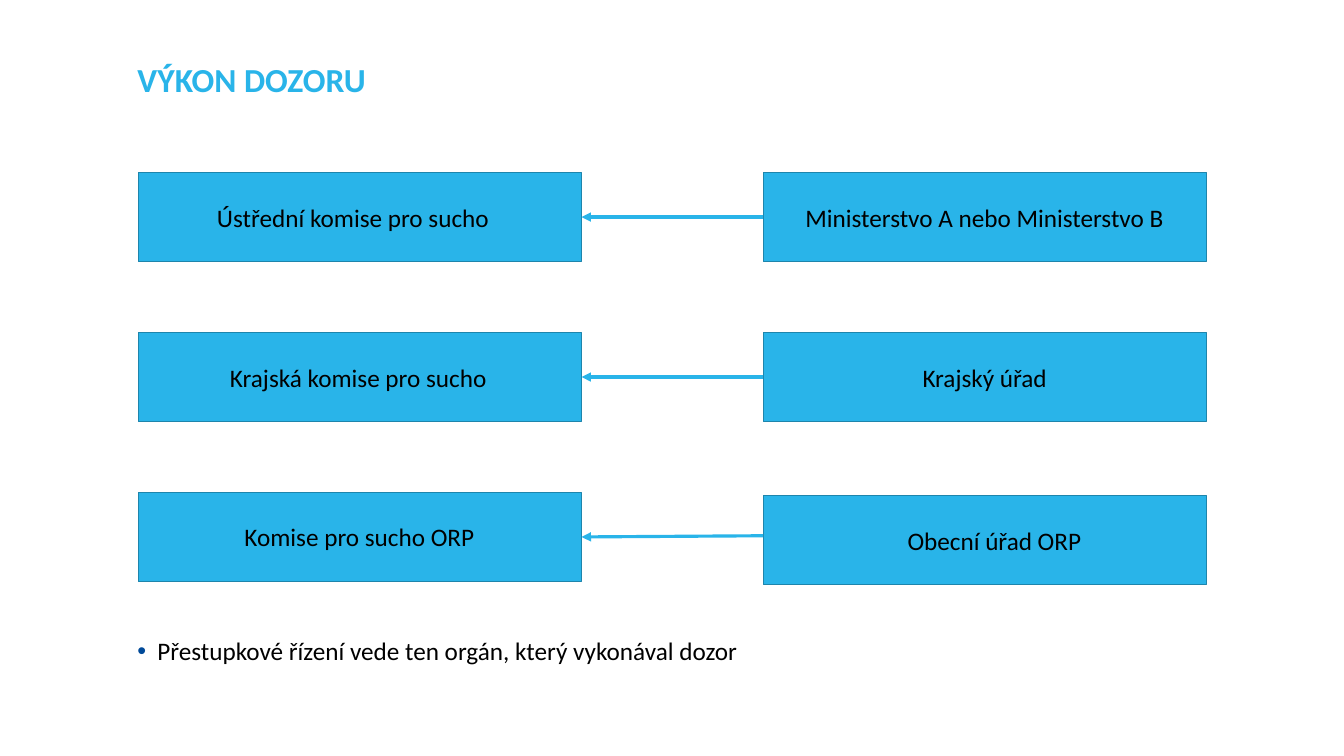
from dataclasses import dataclass

from lxml.etree import SubElement
from pptx import Presentation
from pptx.dml.color import RGBColor
from pptx.enum.shapes import MSO_CONNECTOR as Connector, MSO_SHAPE as Shape
from pptx.enum.text import MSO_ANCHOR as Anchor, MSO_AUTO_SIZE as AutoSize, PP_ALIGN as Align
from pptx.oxml.ns import qn
from pptx.util import Cm, Pt

BLUE, EDGE, BLACK, BULLET = "29B4E9", "1E85AC", "000000", "004A99"
FONT = "Calibri"

# Grid, in centimetres
MARGIN = 6.93
LEFT_X, RIGHT_X = 6.96, 38.46
BOX_WIDTH, BOX_HEIGHT = 22.35, 4.5
FIRST_TOP, ROW_STEP = 8.69, 8.06
LABEL_HEIGHT = 1.8


@dataclass
class Authority:
    name: str
    label_left: float
    label_width: float
    drop: float = 0  # offset below the row's top


@dataclass
class Row:
    commission: Authority
    supervisor: Authority
    arrow_start: float | None = None  # height of a start away from the side's middle


ROWS = [
    Row(Authority("Ústřední komise pro sucho", 8.61, 18.36),
        Authority("Ministerstvo A nebo Ministerstvo B", 39.7, 19.84)),
    Row(Authority("Krajská komise pro sucho", 9.8, 16.51),
        Authority("Krajský úřad", 40.36, 18.54)),
    Row(Authority("Komise pro sucho ORP", 9.25, 17.73),
        Authority("Obecní úřad ORP", 41.33, 17.58, drop=0.16), arrow_start=27),
]


def color(value: str) -> RGBColor:
    return RGBColor.from_string(value)


def place(shape, left: float, top: float, width: float, height: float) -> None:
    shape.left, shape.top = Cm(left), Cm(top)
    shape.width, shape.height = Cm(width), Cm(height)


def write(shape, text: str, *, size: float = 36, fill: str = BLACK, bold: bool = False,
          align=Align.LEFT, anchor=Anchor.TOP, inset: float | None = None,
          line_spacing: float = 1, bullet: str | None = None) -> None:
    frame = shape.text_frame
    frame.word_wrap = True
    frame.auto_size = AutoSize.NONE
    frame.vertical_anchor = anchor
    if inset is not None:
        frame.margin_left = frame.margin_right = Cm(inset)
        frame.margin_top = frame.margin_bottom = Cm(inset)
    paragraph = frame.paragraphs[0]
    paragraph.alignment = align
    paragraph.line_spacing = line_spacing
    paragraph.space_before = Pt(0)
    if bullet:
        properties = paragraph._p.get_or_add_pPr()
        properties.set("marL", str(Cm(1)))
        properties.set("indent", str(-Cm(1)))
        bullet_color = SubElement(properties, qn("a:buClr"))
        SubElement(bullet_color, qn("a:srgbClr"), val=bullet)
        SubElement(properties, qn("a:buFont"), typeface="Arial")
        SubElement(properties, qn("a:buChar"), char="•")
    run = paragraph.add_run()
    run.text = text
    run.font.name, run.font.size, run.font.bold = FONT, Pt(size), bold
    run.font.color.rgb = color(fill)


def add_box(slide, left: float, top: float):
    box = slide.shapes.add_shape(Shape.RECTANGLE, Cm(left), Cm(top),
                                 Cm(BOX_WIDTH), Cm(BOX_HEIGHT))
    box.shadow.inherit = False
    box.fill.solid()
    box.fill.fore_color.rgb = color(BLUE)
    box.line.color.rgb = color(EDGE)
    box.line.width = Pt(1)
    return box


def add_authority(slide, authority: Authority, left: float, row_top: float):
    top = row_top + authority.drop
    box = add_box(slide, left, top)
    label = slide.shapes.add_textbox(
        Cm(authority.label_left), Cm(top + (BOX_HEIGHT - LABEL_HEIGHT) / 2),
        Cm(authority.label_width), Cm(LABEL_HEIGHT))
    write(label, authority.name, align=Align.CENTER, anchor=Anchor.MIDDLE)
    return box


def add_arrow(slide, source, target, start: float | None) -> None:
    arrow = slide.shapes.add_connector(Connector.STRAIGHT, source.left, Cm(start or 0),
                                       target.left + target.width, target.top)
    if start is None:
        arrow.begin_connect(source, 1)
    arrow.end_connect(target, 3)
    arrow.line.color.rgb = color(BLUE)
    arrow.line.width = Pt(4.5)
    SubElement(arrow.line._get_or_add_ln(), qn("a:tailEnd"), type="triangle")
    SubElement(arrow._element.spPr, qn("a:effectLst"))


def main() -> None:
    presentation = Presentation()
    presentation.slide_width, presentation.slide_height = Cm(67.74), Cm(38.1)
    slide = presentation.slides.add_slide(presentation.slide_layouts[1])

    # Title and closing note
    title, body = slide.shapes.title, slide.placeholders[1]
    place(title, MARGIN, 3.2, 60.81, 3.4)
    write(title, "VÝKON DOZORU", size=48, fill=BLUE, bold=True, inset=0, line_spacing=0.9)
    place(body, MARGIN, 32.2, 57.33, 3.86)
    write(body, "Přestupkové řízení vede ten orgán, který vykonával dozor",
          inset=0, line_spacing=0.9, bullet=BULLET)

    # Each supervisor points to the commission it oversees
    for index, row in enumerate(ROWS):
        top = FIRST_TOP + index * ROW_STEP
        commission = add_authority(slide, row.commission, LEFT_X, top)
        supervisor = add_authority(slide, row.supervisor, RIGHT_X, top)
        add_arrow(slide, supervisor, commission, row.arrow_start)

    presentation.save("out.pptx")


if __name__ == "__main__":
    main()
